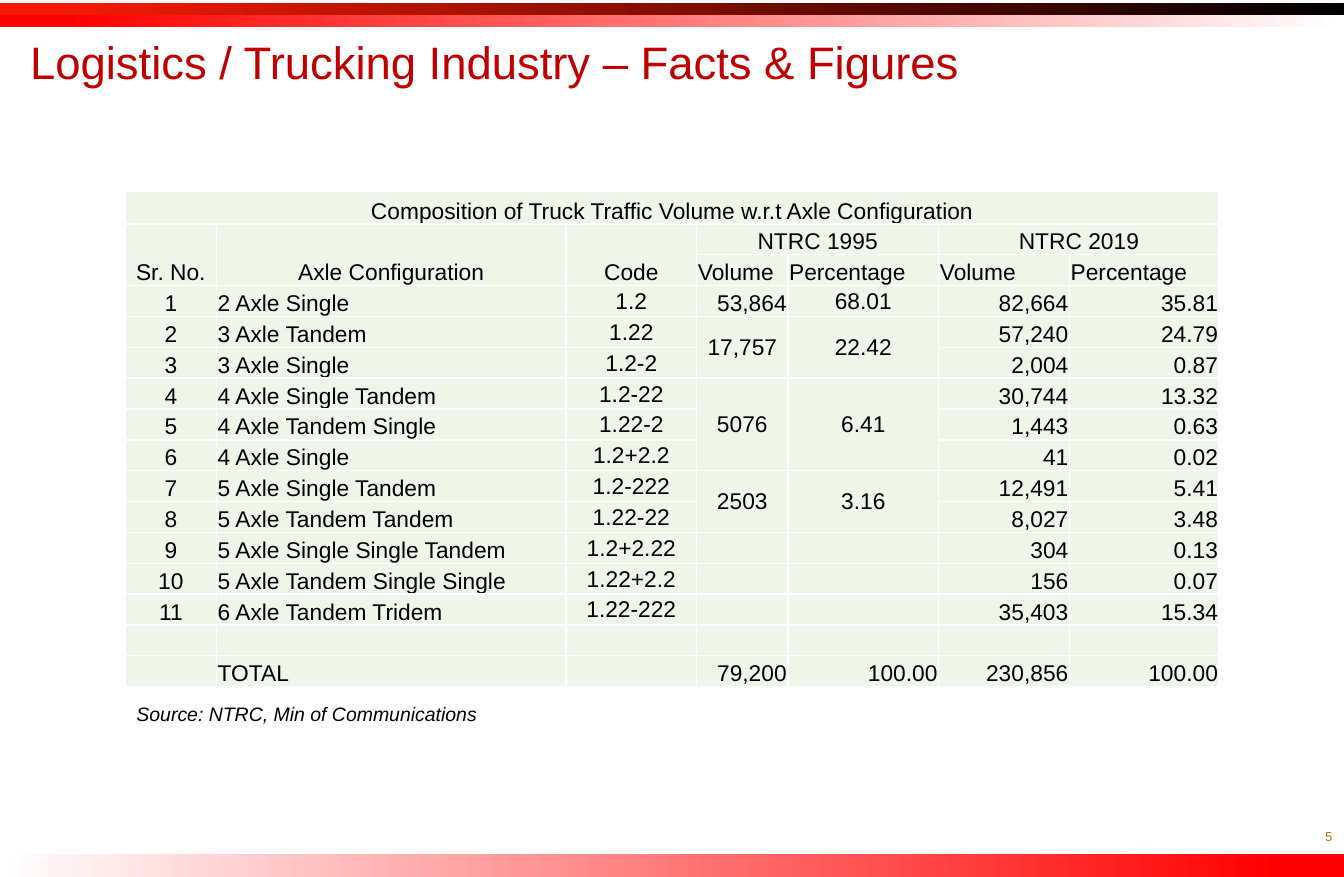
import pptx
import pptx.dml.color
import pptx.enum.shapes
import pptx.enum.text
import pptx.oxml
import pptx.oxml.ns
import pptx.util
import lxml.etree

Pt = pptx.util.Pt
ALIGN = pptx.enum.text.PP_ALIGN
ANCHOR = pptx.enum.text.MSO_ANCHOR
FONT = "Arial"
COLORS = {
    "title": "C00000", "number": "B37015", "text": "000000", "cell": "EFF6E8",
    "white": "FFFFFF", "red": "FF0000", "orange": "F51A03", "black": "000000",
}
COLUMN_WIDTHS = [56.2, 215.3, 80.6, 56.2, 92.9, 80.6, 92.2]
ROW_HEIGHTS = [20.2] + [19] * 15
HEADERS = [
    ["Composition of Truck Traffic Volume w.r.t Axle Configuration"],
    ["Sr. No.", "Axle Configuration", "Code", "NTRC 1995", "", "NTRC 2019"],
    ["", "", "", "Volume", "Percentage", "Volume", "Percentage"],
]
BODY = [
    ["1", "2 Axle Single", "1.2", "53,864", "68.01", "82,664", "35.81"],
    ["2", "3 Axle Tandem", "1.22", "17,757", "22.42", "57,240", "24.79"],
    ["3", "3 Axle Single", "1.2-2", "", "", "2,004", "0.87"],
    ["4", "4 Axle Single Tandem", "1.2-22", "5076", "6.41", "30,744", "13.32"],
    ["5", "4 Axle Tandem Single", "1.22-2", "", "", "1,443", "0.63"],
    ["6", "4 Axle Single", "1.2+2.2", "", "", "41", "0.02"],
    ["7", "5 Axle Single Tandem", "1.2-222", "2503", "3.16", "12,491", "5.41"],
    ["8", "5 Axle Tandem Tandem", "1.22-22", "", "", "8,027", "3.48"],
    ["9", "5 Axle Single Single Tandem", "1.2+2.22", "", "", "304", "0.13"],
    ["10", "5 Axle Tandem Single Single", "1.22+2.2", "", "", "156", "0.07"],
    ["11", "6 Axle Tandem Tridem", "1.22-222", "", "", "35,403", "15.34"],
    [],
    ["", "TOTAL", "", "79,200", "100.00", "230,856", "100.00"],
]
HEADER_MERGES = [(0, 0, 0, 6), (1, 0, 2, 0), (1, 1, 2, 1), (1, 2, 2, 2),
                 (1, 3, 1, 4), (1, 5, 1, 6)]
VOLUME_GROUPS = [(4, 5), (6, 8), (9, 10)]
BODY_ALIGN = [ALIGN.CENTER, ALIGN.LEFT, ALIGN.CENTER] + [ALIGN.RIGHT] * 4


def rgb(name):
    """Return the named colour."""
    return pptx.dml.color.RGBColor.from_string(COLORS[name])


def write(para, text, size=14, color="text", align=ALIGN.LEFT, italic=False):
    """Put one formatted span of text in a paragraph."""
    para.alignment = align
    span = para.add_run()
    span.text = text
    span.font.name = FONT
    span.font.size = Pt(size)
    span.font.italic = italic
    span.font.color.rgb = rgb(color)


def add_text(page, text, left, top, width, height, wrap=True,
             anchor=ANCHOR.MIDDLE, **style):
    """Add a text box holding one paragraph."""
    box = page.shapes.add_textbox(Pt(left), Pt(top), Pt(width), Pt(height))
    box.text_frame.word_wrap = wrap
    box.text_frame.vertical_anchor = anchor
    write(box.text_frame.paragraphs[0], text, **style)


def add_band(page, left, top, height, start, end, rotation=0):
    """Add a page-wide bar with a horizontal gradient."""
    band = page.shapes.add_shape(pptx.enum.shapes.MSO_SHAPE.RECTANGLE,
                                 Pt(left), Pt(top), Pt(828), Pt(height))
    band.shadow.inherit = False
    band.line.fill.background()
    band.rotation = rotation
    band.fill.gradient()
    band.fill.gradient_angle = 0
    for stop, position, color in zip(band.fill.gradient_stops, (0.05, 1), (start, end)):
        stop.position = position
        stop.color.rgb = rgb(color)


def set_borders(cell):
    """Draw a thin white line on all four sides of a cell."""
    properties = cell._tc.get_or_add_tcPr()
    for side in ("lnL", "lnR", "lnT", "lnB"):
        properties.append(pptx.oxml.parse_xml(
            f'<a:{side} {pptx.oxml.ns.nsdecls("a")} w="{Pt(1)}"><a:solidFill>'
            f'<a:srgbClr val="{COLORS["white"]}"/></a:solidFill></a:{side}>'))


def fill_cell(cell, text, align, anchor):
    """Format a table cell and write its text."""
    set_borders(cell)
    cell.fill.solid()
    cell.fill.fore_color.rgb = rgb("cell")
    cell.margin_left = cell.margin_right = cell.margin_top = Pt(0.72)
    cell.margin_bottom = Pt(0)
    cell.vertical_anchor = anchor
    para = cell.text_frame.paragraphs[0]
    if text:
        write(para, text, align=align)
    else:
        lxml.etree.SubElement(para._p, pptx.oxml.ns.qn("a:endParaRPr"), sz="1400")


def cell_layout(row, column):
    """Return the alignment and anchor that a table position calls for."""
    if row < 3:
        return (ALIGN.LEFT if row == 2 else ALIGN.CENTER), ANCHOR.BOTTOM
    grouped = column in (3, 4) and any(a <= row <= b for a, b in VOLUME_GROUPS)
    if grouped or (row, column) == (3, 4) or column == 2:
        return ALIGN.CENTER, ANCHOR.MIDDLE
    return BODY_ALIGN[column], ANCHOR.BOTTOM


def add_traffic_table(page, left, top):
    """Add the table of truck traffic by axle configuration."""
    frame = page.shapes.add_table(len(ROW_HEIGHTS), len(COLUMN_WIDTHS), Pt(left), Pt(top),
                                  Pt(sum(COLUMN_WIDTHS)), Pt(sum(ROW_HEIGHTS)))
    table = frame.table
    table.first_row = table.horz_banding = False
    for column, width in zip(table.columns, COLUMN_WIDTHS):
        column.width = Pt(width)
    for row, height in zip(table.rows, ROW_HEIGHTS):
        row.height = Pt(height)
    for row, texts in enumerate(HEADERS + BODY):
        for column in range(len(COLUMN_WIDTHS)):
            text = texts[column] if column < len(texts) else ""
            fill_cell(table.cell(row, column), text, *cell_layout(row, column))
    group_merges = [(a, column, b, column) for a, b in VOLUME_GROUPS for column in (3, 4)]
    for first_row, first_column, last_row, last_column in HEADER_MERGES + group_merges:
        table.cell(first_row, first_column).merge(table.cell(last_row, last_column))


def main():
    """Build the slide and save the deck."""
    deck = pptx.Presentation()
    deck.slide_width, deck.slide_height = Pt(828), Pt(540)
    page = deck.slides.add_slide(deck.slide_layouts[6])
    add_band(page, 0, 2, 7.2, "orange", "black")
    add_band(page, 0, 9.2, 7.2, "red", "white")
    add_band(page, 0.5, 525.6, 14.4, "red", "white", rotation=180)
    add_text(page, "Logistics / Trucking Industry – Facts & Figures",
             11.5, 12.3, 775.5, 50.4, size=28, color="title")
    add_text(page, "5", 593.3, 500.4, 234.7, 28.8, size=8, color="number",
             align=ALIGN.RIGHT)
    add_traffic_table(page, 77.2, 117.7)
    add_text(page, "Source: NTRC, Min of Communications", 77, 429, 226, 21.8,
             wrap=False, anchor=ANCHOR.TOP, size=12, italic=True)
    deck.save("out.pptx")


if __name__ == "__main__":
    main()
